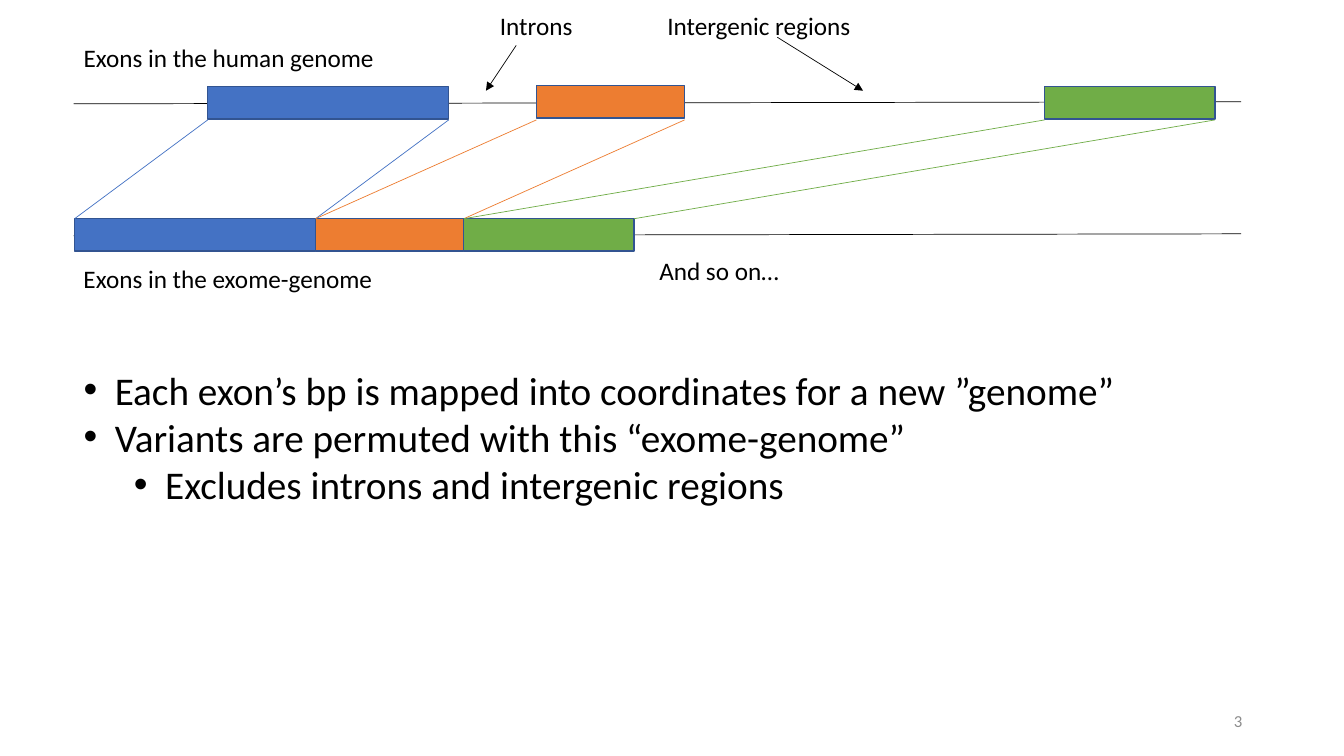
"""Build a slide that maps exons of the human genome onto an exome-genome."""
from lxml import etree
from pptx import Presentation
from pptx.dml.color import RGBColor
from pptx.enum.shapes import MSO_CONNECTOR, MSO_SHAPE
from pptx.enum.text import MSO_ANCHOR, MSO_AUTO_SIZE, PP_ALIGN
from pptx.oxml.ns import qn
from pptx.util import Inches, Pt

BLACK = RGBColor(0x00, 0x00, 0x00)
GREY = RGBColor(0x8C, 0x8C, 0x8C)
BLUE = RGBColor(0x44, 0x72, 0xC4)
ORANGE = RGBColor(0xED, 0x7D, 0x31)
GREEN = RGBColor(0x70, 0xAD, 0x47)
OUTLINE = RGBColor(0x32, 0x54, 0x91)
STRAIGHT = MSO_CONNECTOR.STRAIGHT
RECTANGLE = MSO_SHAPE.RECTANGLE
MIDDLE = MSO_ANCHOR.MIDDLE
RIGHT = PP_ALIGN.RIGHT
LEFT = PP_ALIGN.LEFT
NO_FIT = MSO_AUTO_SIZE.NONE
GROW = MSO_AUTO_SIZE.SHAPE_TO_FIT_TEXT

FONT = "Calibri"
MARGIN, LINE_END = 0.73, 12.31
EXON_HEIGHT, EXOME_LEFT, EXOME_TOP = 0.32, 0.74, 2.17
LINK_TOP = 1.19
BULLET_INDENT, LEVEL_STEP = 0.31, 0.5

EXONS = [
    (2.06, 0.86, 2.39, BLUE),
    (5.32, 0.85, 1.47, ORANGE),
    (10.36, 0.86, 1.69, GREEN),
]
GENOME_LINES = [1.03, 2.34]
LABELS = [
    ("Exons in the human genome", MARGIN, 0.37, 3.12),
    ("Introns", 4.86, 0.05, 0.93),
    ("Intergenic regions", 6.52, 0.05, 2.04),
    ("Exons in the exome-genome", MARGIN, 2.56, 3.1),
    ("And so on…", 6.44, 2.48, 1.42),
]
POINTERS = [(5.12, 0.45, 4.82, 0.9), (7.71, 0.37, 8.56, 0.9)]
BULLETS = [
    (0, "Each exon’s bp is mapped into coordinates for a new ”genome”"),
    (0, "Variants are permuted with this “exome-genome”"),
    (1, "Excludes introns and intergenic regions"),
]


def add_line(page, ends, color, arrow=False):
    line = page.shapes.add_connector(STRAIGHT, *map(Inches, ends))
    line.line.color.rgb = color
    line.line.width = Pt(0.5)
    if arrow:
        etree.SubElement(line.line._get_or_add_ln(), qn("a:tailEnd"), type="triangle")
    etree.SubElement(line._element.spPr, qn("a:effectLst"))


def add_exon(page, left, top, width, color):
    exon = page.shapes.add_shape(
        RECTANGLE, *map(Inches, (left, top, width, EXON_HEIGHT)))
    exon.shadow.inherit = False
    exon.fill.solid()
    exon.fill.fore_color.rgb = color
    exon.line.color.rgb = OUTLINE
    exon.line.width = Pt(1)


def add_text(page, lines, area, size, color=BLACK, align=LEFT, wrap=False):
    box = page.shapes.add_textbox(*map(Inches, area))
    frame = box.text_frame
    frame.word_wrap = wrap
    frame.auto_size = NO_FIT if wrap else GROW
    for index, text in enumerate(lines):
        para = frame.paragraphs[0] if index == 0 else frame.add_paragraph()
        para.text = text
        para.alignment = align
        para.font.name = FONT
        para.font.size = Pt(size)
        para.font.color.rgb = color
    return frame


def add_bullet(para, level):
    para.level = level
    properties = para._p.get_or_add_pPr()
    properties.set("marL", str(Inches(BULLET_INDENT + level * LEVEL_STEP)))
    properties.set("indent", str(-Inches(BULLET_INDENT)))
    font = etree.Element(qn("a:buFont"), typeface="Arial")
    mark = etree.Element(qn("a:buChar"), char="•")
    properties.insert(0, font)
    font.addnext(mark)


def main():
    deck = Presentation()
    deck.slide_width, deck.slide_height = Inches(13.33), Inches(7.5)
    page = deck.slides.add_slide(deck.slide_layouts[6])

    for height in GENOME_LINES:
        add_line(page, (MARGIN, height, LINE_END, height - 0.02), BLACK)

    exome_left = EXOME_LEFT
    for left, top, width, color in EXONS:
        add_exon(page, left, top, width, color)
        add_exon(page, exome_left, EXOME_TOP, width, color)
        for edge in (0, width):
            add_line(page, (left + edge, LINK_TOP, exome_left + edge, EXOME_TOP), color)
        exome_left += width

    for text, left, top, width in LABELS:
        add_text(page, [text], (left, top, width, 0.4), 18)
    for ends in POINTERS:
        add_line(page, ends, BLACK, arrow=True)

    body = add_text(page, [text for _, text in BULLETS], (MARGIN, 3.58, 10.55, 1.51), 28)
    for para, (level, _) in zip(body.paragraphs, BULLETS):
        add_bullet(para, level)

    number = add_text(page, ["3"], (9.42, 6.95, 3, 0.4), 12, GREY, RIGHT, wrap=True)
    number.vertical_anchor = MIDDLE
    deck.save("out.pptx")


if __name__ == "__main__":
    main()
